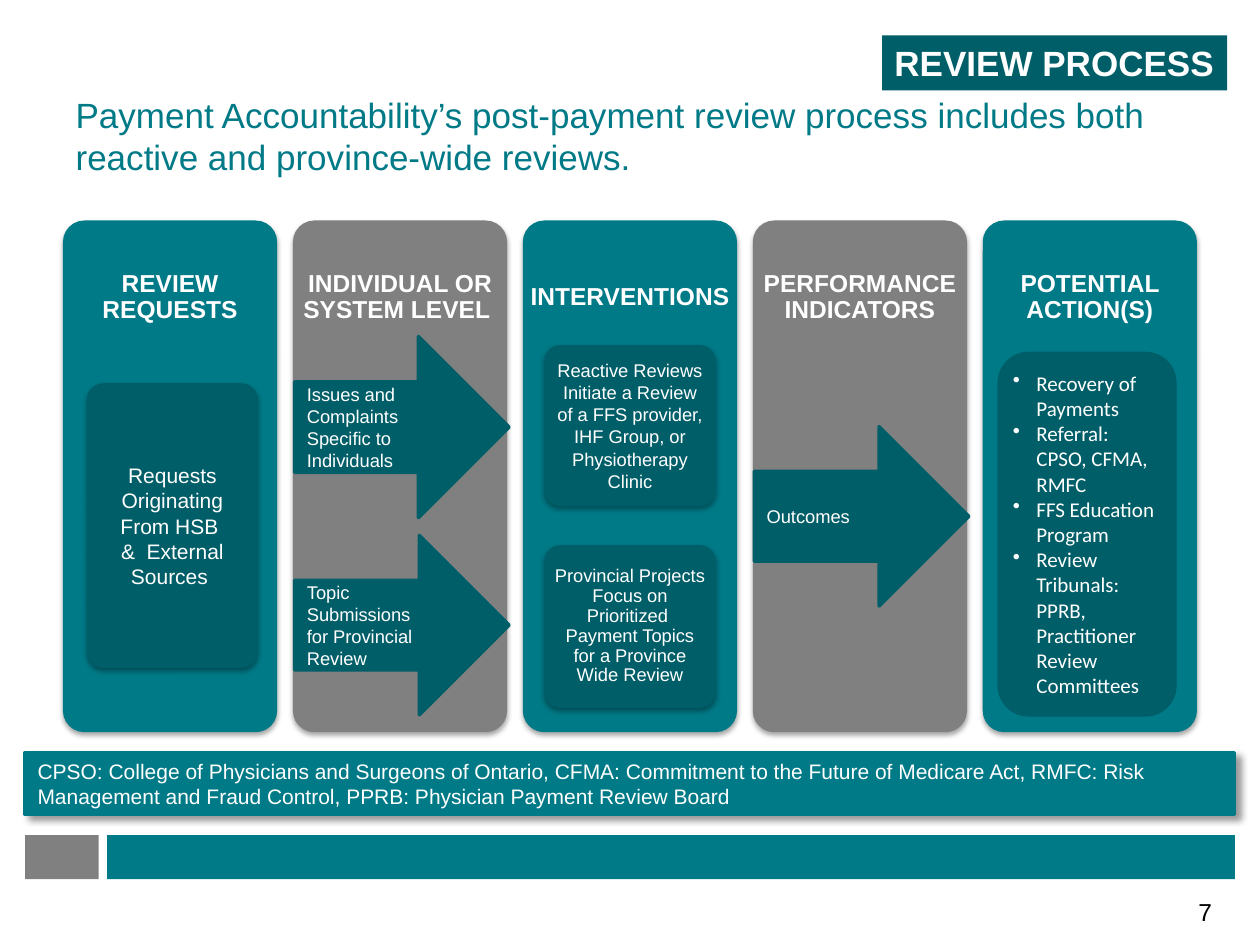
import dataclasses
import typing

import lxml.etree
import pptx
import pptx.dml.color
import pptx.enum.shapes
import pptx.enum.text
import pptx.oxml.ns
import pptx.util

Pt = pptx.util.Pt
qn = pptx.oxml.ns.qn
RGB = pptx.dml.color.RGBColor
Kind = pptx.enum.shapes.MSO_SHAPE
Align = pptx.enum.text.PP_ALIGN
Anchor = pptx.enum.text.MSO_ANCHOR

TEAL = RGB(0x00, 0x7A, 0x87)
DARK = RGB(0x00, 0x5E, 0x68)
GRAY = RGB(0x80, 0x80, 0x80)
WHITE = RGB(0xFF, 0xFF, 0xFF)
BLACK = RGB(0x00, 0x00, 0x00)


class Box(typing.NamedTuple):
    """A frame in points."""
    left: float
    top: float
    width: float
    height: float

    def shrink(self, gap: float) -> "Box":
        return Box(self.left + gap, self.top + gap,
                   self.width - 2 * gap, self.height - 2 * gap)

    def points(self) -> list:
        return [Pt(side) for side in self]


class Shade(typing.NamedTuple):
    """A drop shadow: opacity in percent, lengths in points, angle in degrees."""
    alpha: int
    blur: float
    dist: float
    angle: int


SOFT = Shade(35, 3.1, 1.8, 90)
DEEP = Shade(40, 4, 3, 45)


@dataclasses.dataclass
class Card:
    box: Box
    lines: list[str]
    size: float = 10.5
    space: float = 1


@dataclasses.dataclass
class Arrow:
    box: Box
    lines: list[str]


# Columns share one width and one pitch
LEFT, TOP, WIDTH, HEIGHT, PITCH, HEAD = 36, 126, 122.4, 292.4, 131.4, 88
HEADS = ["REVIEW REQUESTS", "INDIVIDUAL OR SYSTEM LEVEL ", "INTERVENTIONS",
         "PERFORMANCE INDICATORS", "POTENTIAL ACTION(S)"]

CARDS = [
    Card(Box(49.5, 219, 98, 162.7),
         ["Requests", "Originating From HSB ", "&  External Sources "], size=12),
    Card(Box(311, 197.2, 98, 92),
         ["Reactive Reviews",
          "Initiate a Review of a FFS provider, IHF Group, or Physiotherapy Clinic"]),
    Card(Box(311, 311.5, 98, 93),
         ["Provincial Projects Focus on Prioritized  Payment Topics "
          "for a Province Wide Review"], space=0.9),
]

ARROWS = [
    Arrow(Box(168.3, 192.3, 122.6, 103.5),
          ["Issues and Complaints Specific to  Individuals"]),
    Arrow(Box(168.3, 306, 122.6, 102.5),
          ["Topic Submissions", "for Provincial Review"]),
    Arrow(Box(431, 243.8, 122.6, 102.5), ["Outcomes"]),
]

ACTIONS = ["Recovery of Payments", "Referral: CPSO, CFMA, RMFC",
           "FFS Education Program",
           "Review Tribunals: PPRB, Practitioner Review Committees"]

NOTE = ("CPSO: College of Physicians and Surgeons of Ontario, CFMA: Commitment to "
        "the Future of Medicare Act, RMFC: Risk Management and Fraud Control, "
        "PPRB: Physician Payment Review Board")


def write(shape, lines: list[str], *, size: float, color: RGB = WHITE,
          font: str = "Arial", bold: bool = False, align=Align.LEFT,
          anchor=Anchor.MIDDLE, inset: tuple = (7.2, 3.6), space: float = 1,
          bullet: float = 0, wrap: bool = True) -> None:
    """Fill a shape with paragraphs; bullet is the hanging indent in points."""
    frame = shape.text_frame
    frame.word_wrap = wrap
    frame.auto_size = pptx.enum.text.MSO_AUTO_SIZE.NONE
    frame.vertical_anchor = anchor
    frame.margin_left = frame.margin_right = Pt(inset[0])
    frame.margin_top = frame.margin_bottom = Pt(inset[1])
    for index, line in enumerate(lines):
        para = frame.add_paragraph() if index else frame.paragraphs[0]
        para.alignment = align
        para.line_spacing = space
        run = para.add_run()
        run.text = line
        run.font.name, run.font.size = font, Pt(size)
        run.font.bold, run.font.color.rgb = bold, color
        if bullet:
            props = para._p.get_or_add_pPr()
            props.set("marL", str(Pt(bullet)))
            props.set("indent", str(-Pt(bullet)))
            lxml.etree.SubElement(props, qn("a:buChar"), char="•")


def draw(slide, kind, box: Box, fill: RGB, *, edge: bool = False,
         shade: Shade | None = None, round: float | None = None):
    """Add a flat filled shape, with an edge of its own colour or a shadow."""
    shape = slide.shapes.add_shape(kind, *box.points())
    shape.fill.solid()
    shape.fill.fore_color.rgb = fill
    if edge:
        shape.line.color.rgb = fill
        shape.line.width = Pt(2)
    else:
        shape.line.fill.background()
    if round is not None:
        shape.adjustments[0] = round
    shape.shadow.inherit = False
    if shade:
        effects = shape.element.spPr.find(qn("a:effectLst"))
        outer = lxml.etree.SubElement(
            effects, qn("a:outerShdw"), blurRad=str(Pt(shade.blur)),
            dist=str(Pt(shade.dist)), dir=str(shade.angle * 60000),
            rotWithShape="0")
        tint = lxml.etree.SubElement(outer, qn("a:srgbClr"), val=str(BLACK))
        lxml.etree.SubElement(tint, qn("a:alpha"), val=str(shade.alpha * 1000))
    return shape


def label(slide, box: Box, lines: list[str], **style) -> None:
    write(slide.shapes.add_textbox(*box.points()), lines, **style)


def draw_column(slide, index: int, head: str) -> None:
    box = Box(LEFT + index * PITCH, TOP, WIDTH, HEIGHT)
    draw(slide, Kind.ROUNDED_RECTANGLE, box, GRAY if index % 2 else TEAL,
         shade=SOFT, round=0.1)
    label(slide, box._replace(height=HEAD), [head], size=14, bold=True,
          align=Align.CENTER, inset=(4.2, 4.2), space=0.9)


def draw_card(slide, card: Card) -> None:
    draw(slide, Kind.ROUNDED_RECTANGLE, card.box, DARK, shade=SOFT, round=0.1)
    label(slide, card.box.shrink(2.9), card.lines, size=card.size,
          align=Align.CENTER, inset=(2.1, 1.6), space=card.space)


def draw_arrow(slide, arrow: Arrow) -> None:
    shape = draw(slide, Kind.RIGHT_ARROW, arrow.box, DARK, edge=True)
    write(shape, arrow.lines, size=10.5)


def main() -> None:
    deck = pptx.Presentation()
    deck.slide_width, deck.slide_height = Pt(720), Pt(540)
    slide = deck.slides.add_slide(deck.slide_layouts[5])

    # Title
    title = slide.shapes.title
    title.left, title.top, title.width, title.height = Box(36, 43.2, 648, 68.4).points()
    write(title, ["Payment Accountability’s post-payment review process includes "
                  "both reactive and province-wide reviews."], size=20, color=TEAL)

    # Process columns and their cards
    for index, head in enumerate(HEADS):
        draw_column(slide, index, head)
    for card in CARDS:
        draw_card(slide, card)

    # Footer bars and page number
    draw(slide, Kind.RECTANGLE, Box(61.2, 477.2, 644.4, 25.2), TEAL)
    draw(slide, Kind.RECTANGLE, Box(14.4, 477.2, 42, 25.2), GRAY)
    label(slide, Box(671, 509, 35.3, 20.2), ["7"], size=14, color=BLACK,
          align=Align.CENTER, anchor=Anchor.TOP)

    # Abbreviations and section tag
    note = draw(slide, Kind.RECTANGLE, Box(14.4, 430, 691.2, 35.5), TEAL,
                edge=True, shade=DEEP)
    write(note, [NOTE], size=12)
    tag = draw(slide, Kind.RECTANGLE, Box(504, 20.2, 197.2, 31.5), DARK)
    write(tag, ["REVIEW PROCESS"], size=20, bold=True, anchor=Anchor.TOP, wrap=False)

    # Arrows and list of actions
    for arrow in ARROWS:
        draw_arrow(slide, arrow)
    panel = draw(slide, Kind.ROUNDED_RECTANGLE, Box(571, 202, 100.4, 206.5), DARK,
                 edge=True)
    write(panel, ACTIONS, size=12, font="Calibri", inset=(2.9, 3.6), bullet=13.5)

    deck.save("out.pptx")


if __name__ == "__main__":
    main()
